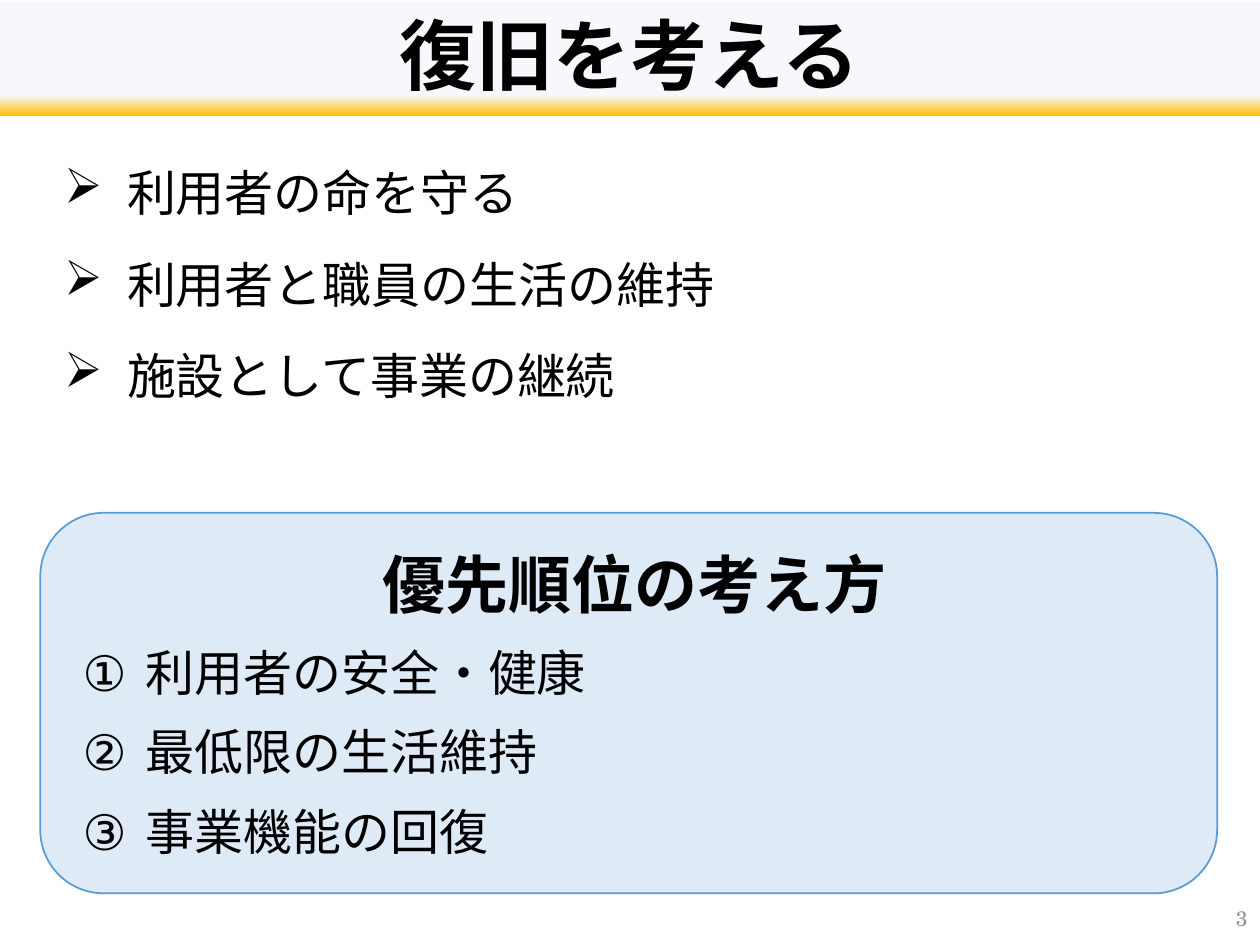
import pptx
import pptx.util
import pptx.dml.color
import pptx.enum.shapes
import pptx.enum.text
import pptx.oxml.ns
import lxml.etree

HUE = {"ink": "000000", "gray": "8C8C8C", "pale": "F6F8FC", "gold": "FFC000",
       "panel": "DEEBF7", "edge": "5B9BD5"}
FACE = "TeX Gyre Schola"

TITLE = "復旧を考える"
GOALS = ["利用者の命を守る", "利用者と職員の生活の維持", "施設として事業の継続"]
HEAD = "優先順位の考え方"
RANKS = ["利用者の安全・健康", "最低限の生活維持", "事業機能の回復"]
PAGE = "3"

LEFT, WIDE = 0.32, 9.34
INCH = pptx.util.Inches
KIND = pptx.enum.shapes.MSO_SHAPE
SIDE = pptx.enum.text.PP_ALIGN
MID = pptx.enum.text.MSO_ANCHOR.MIDDLE
TOP = pptx.enum.text.MSO_ANCHOR.TOP


def tint(name):
    return pptx.dml.color.RGBColor.from_string(HUE[name])


def node(root, tag, **marks):
    return lxml.etree.SubElement(root, pptx.oxml.ns.qn(tag), **marks)


def write(frame, text, size=28, bold=False, hue="ink", side=SIDE.LEFT,
          line=None, after=0, hang=False, mark=None, auto=None):
    para = frame.paragraphs[0]
    if para.runs:
        para = frame.add_paragraph()
    para.alignment = side
    para.space_before = pptx.util.Pt(0)
    para.space_after = pptx.util.Pt(after)
    if line:
        para.line_spacing = line
    prop = para._p.get_or_add_pPr()
    if hang:
        prop.set("marL", str(INCH(0.59)))
        prop.set("indent", str(INCH(-0.5)))
    if mark:
        node(prop, "a:buChar", char=mark)
    elif auto:
        node(prop, "a:buAutoNum", type=auto)
    else:
        node(prop, "a:buNone")
    run = para.add_run()
    run.text = text
    font = run.font
    font.size = pptx.util.Pt(size)
    font.bold = bold
    font.color.rgb = tint(hue)
    font.name = FACE
    node(run._r.get_or_add_rPr(), "a:ea", typeface=FACE)


def setup(shape, anchor):
    frame = shape.text_frame
    frame.word_wrap = True
    frame.vertical_anchor = anchor
    return frame


def place(page, box, kind=None, anchor=MID):
    spots = [INCH(n) for n in box]
    if kind is None:
        shape = page.shapes.add_textbox(*spots)
    else:
        shape = page.shapes.add_shape(kind, *spots)
        shape.shadow.inherit = False
    return shape, setup(shape, anchor)


def main():
    deck = pptx.Presentation()
    deck.slide_width, deck.slide_height = INCH(10), INCH(7.5)
    page = deck.slides.add_slide(deck.slide_layouts[6])

    band, frame = place(page, (0, 0.02, 10, 0.9), KIND.RECTANGLE)
    band.line.fill.background()
    band.fill.gradient()
    band.fill.gradient_angle = 270
    for stop, (spot, hue) in zip(band.fill.gradient_stops,
                                 [(0.82, "pale"), (1, "gold")]):
        stop.position = spot
        stop.color.rgb = tint(hue)
    write(frame, TITLE, size=44, bold=True, side=SIDE.CENTER, line=0.9)

    _, frame = place(page, (7.75, 7.09, 2.25, 0.4))
    write(frame, PAGE, size=12, hue="gray", side=SIDE.RIGHT)

    panel, frame = place(page, (LEFT, 4.07, WIDE, 3.02), KIND.ROUNDED_RECTANGLE)
    panel.fill.solid()
    panel.fill.fore_color.rgb = tint("panel")
    panel.line.color.rgb = tint("edge")
    panel.line.width = pptx.util.Pt(1)
    write(frame, HEAD, size=36, bold=True, side=SIDE.CENTER, after=12, hang=True)
    for text in RANKS:
        write(frame, text, after=12, hang=True, auto="circleNumDbPlain")

    _, frame = place(page, (LEFT, 1.15, WIDE, 2.7), anchor=TOP)
    for text in GOALS:
        write(frame, text, line=1.2, after=12, hang=True, mark="➢")

    deck.save("out.pptx")


if __name__ == "__main__":
    main()
